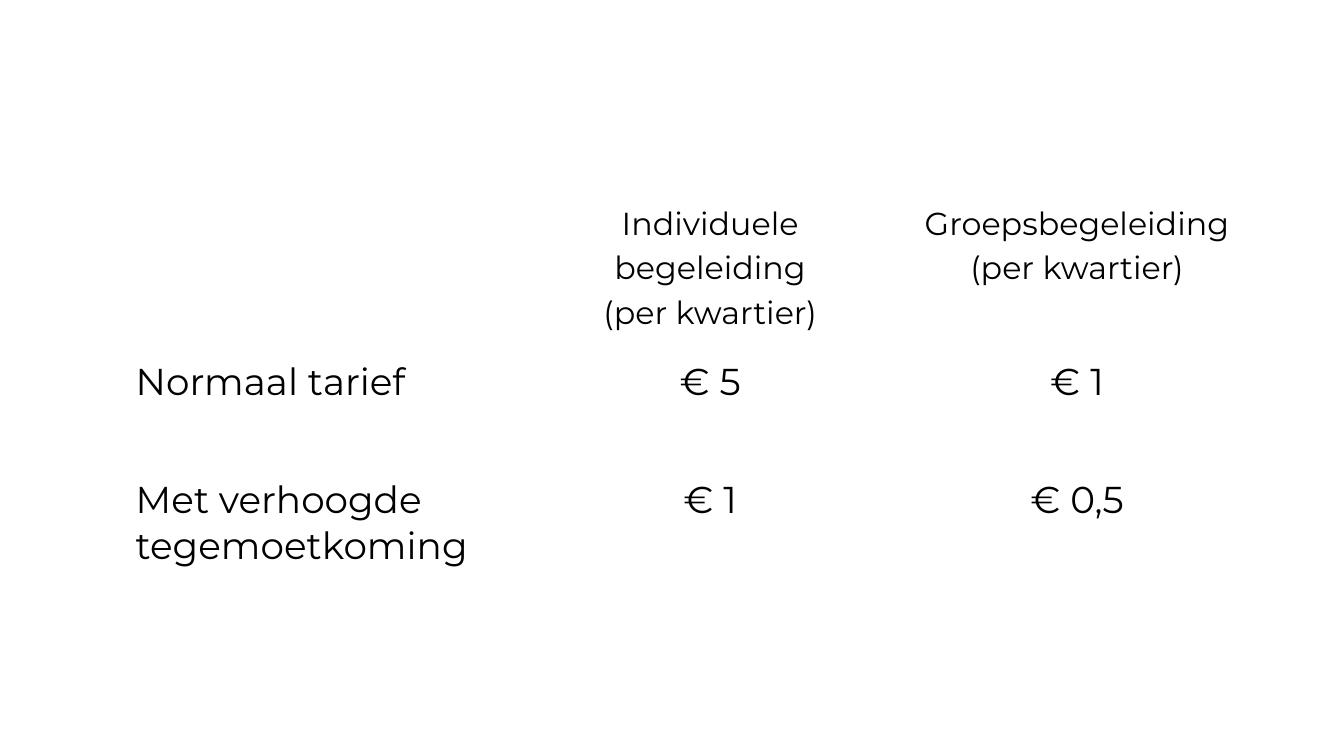
from dataclasses import dataclass

from pptx import Presentation
from pptx.dml.color import RGBColor
from pptx.enum.text import PP_ALIGN
from pptx.util import Inches, Pt


@dataclass(frozen=True)
class Theme:
    font: str = "Montserrat"
    ink: str = "000000"
    paper: str = "FFFFFF"
    header_size: int = 17
    body_size: int = 20
    header_spacing: float = 1.15
    cell_inset: float = 0.1


WIDTH = 10
HEIGHT = WIDTH * 9 / 16
TABLE_LEFT, TABLE_TOP = 0.91 / WIDTH, 1.38 / HEIGHT
COLUMN_SHARES = [length / WIDTH for length in (2.92, 2.91, 2.55)]
ROW_SHARES = [length / HEIGHT for length in (1.19, 0.88, 0.88)]

RATES = [
    ["", "Individuele begeleiding\n(per kwartier)", "Groepsbegeleiding\n(per kwartier)"],
    ["Normaal tarief", "€ 5", "€ 1"],
    ["Met verhoogde tegemoetkoming", "€ 1", "€ 0,5"],
]


def write(tf, text, *, font, size, color, align=PP_ALIGN.LEFT, spacing=1.0):
    """Put each line of text in its own formatted paragraph."""
    tf.word_wrap = True
    for i, line in enumerate(text.split("\n")):
        p = tf.add_paragraph() if i else tf.paragraphs[0]
        p.alignment = align
        p.line_spacing = spacing
        r = p.add_run()
        r.text = line
        r.font.name = font
        r.font.size = Pt(size)
        r.font.color.rgb = RGBColor.from_string(color)


class SlideBuilder:
    def __init__(self, prs, theme):
        self.prs, self.theme = prs, theme
        self.s = prs.slides.add_slide(prs.slide_layouts[6])
        fill = self.s.background.fill
        fill.solid()
        fill.fore_color.rgb = RGBColor.from_string(theme.paper)

    def x(self, share):
        return int(self.prs.slide_width * share)

    def y(self, share):
        return int(self.prs.slide_height * share)

    def table(self, rows, left, top, widths, heights):
        """Draw an unstyled table; all lengths are shares of the slide."""
        table = self.s.shapes.add_table(
            len(rows), len(widths), self.x(left), self.y(top),
            self.x(sum(widths)), self.y(sum(heights))).table
        table.first_row = table.horz_banding = False
        for column, width in zip(table.columns, widths):
            column.width = self.x(width)
        for row, height in zip(table.rows, heights):
            row.height = self.y(height)
        for i, texts in enumerate(rows):
            for j, text in enumerate(texts):
                self.cell(table.cell(i, j), text, header=i == 0, label=j == 0)

    def cell(self, cell, text, header, label):
        t = self.theme
        cell.fill.background()
        inset = Inches(t.cell_inset)
        cell.margin_left = cell.margin_right = inset
        cell.margin_top = cell.margin_bottom = inset
        if text:
            write(cell.text_frame, text, font=t.font, color=t.ink,
                  size=t.header_size if header else t.body_size,
                  align=PP_ALIGN.LEFT if label else PP_ALIGN.CENTER,
                  spacing=t.header_spacing if header else 1.0)


def main():
    prs = Presentation()
    prs.slide_width, prs.slide_height = Inches(WIDTH), Inches(HEIGHT)
    slide = SlideBuilder(prs, Theme())
    slide.table(RATES, TABLE_LEFT, TABLE_TOP, COLUMN_SHARES, ROW_SHARES)
    prs.save("out.pptx")


if __name__ == "__main__":
    main()
